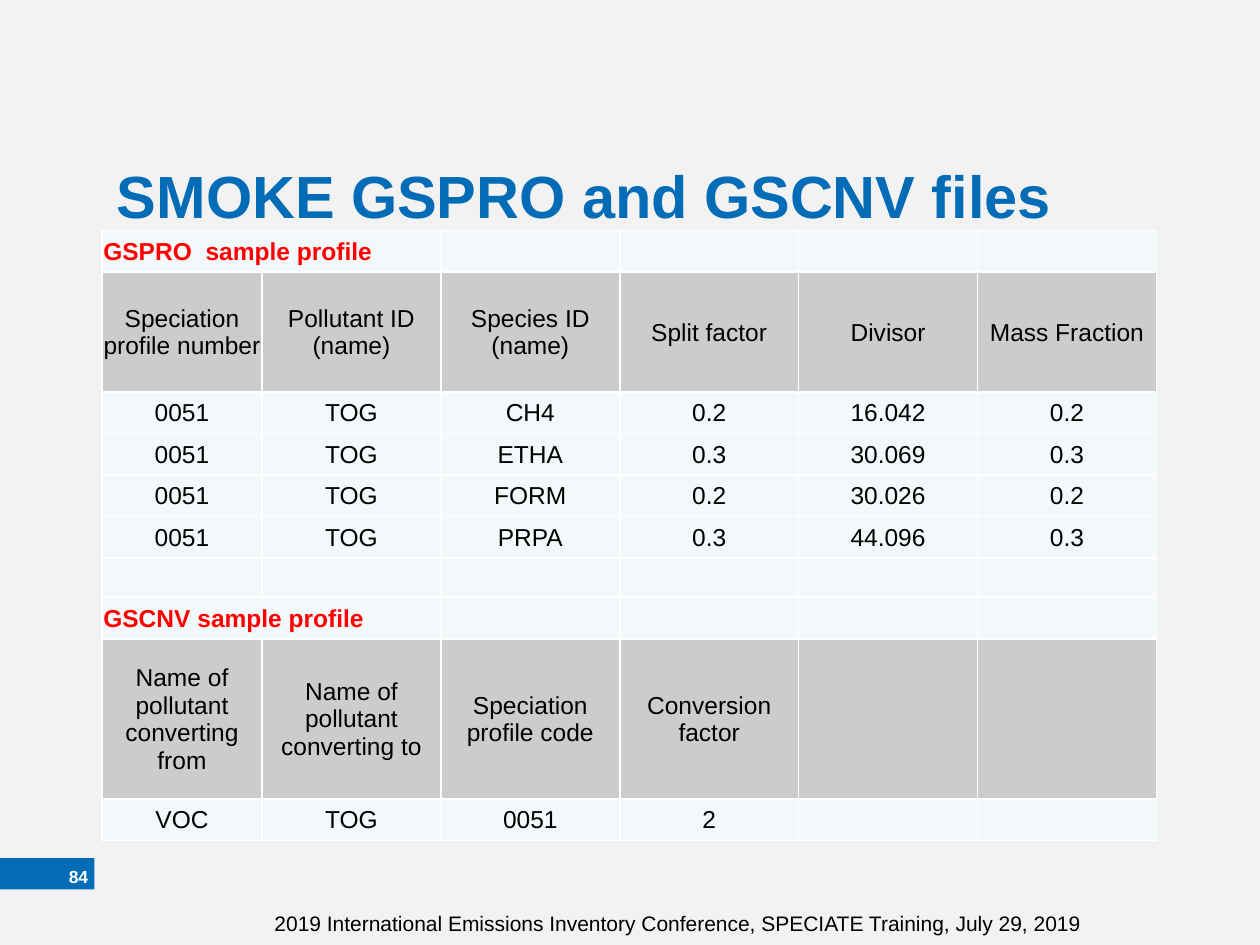
from lxml import etree
from pptx import Presentation
from pptx.dml.color import RGBColor
from pptx.enum import shapes, text
from pptx.oxml import ns
from pptx.util import Inches, Pt

BLUE = RGBColor(0x02, 0x6C, 0xB6)
RED = RGBColor(0xFF, 0, 0)
BLACK = RGBColor(0, 0, 0)
WHITE = RGBColor(0xFF, 0xFF, 0xFF)
PAGE = RGBColor(0xF2, 0xF2, 0xF2)
PALE = RGBColor(0xF3, 0xF9, 0xFA)
GREY = RGBColor(0xCC, 0xCC, 0xCC)

# Content: (kind of row, cell texts)
TITLE = "SMOKE GSPRO and GSCNV files"
FOOT = ("2019 International Emissions Inventory Conference, "
        "SPECIATE Training, July 29, 2019")
NUM = "84"
ROWS = [
    ("name", ["GSPRO  sample profile"]),
    ("head", ["Speciation profile number", "Pollutant ID (name)",
              "Species ID (name)", "Split factor", "Divisor",
              "Mass Fraction"]),
    ("data", ["0051", "TOG", "CH4", "0.2", "16.042", "0.2"]),
    ("data", ["0051", "TOG", "ETHA", "0.3", "30.069", "0.3"]),
    ("data", ["0051", "TOG", "FORM", "0.2", "30.026", "0.2"]),
    ("data", ["0051", "TOG", "PRPA", "0.3", "44.096", "0.3"]),
    ("gap", []),
    ("name", ["GSCNV sample profile"]),
    ("head", ["Name of pollutant converting from",
              "Name of pollutant converting to",
              "Speciation profile code", "Conversion factor"]),
    ("data", ["VOC", "TOG", "0051", "2"]),
]
COLS = [1.27] + [1.42] * 5
TALL = [0.33, 0.95] + [0.33] * 4 + [0.31, 0.33, 1.27, 0.33]


def write(frame, words, size=14, color=BLACK, bold=False,
          align=text.PP_ALIGN.LEFT):
    para = frame.paragraphs[0]
    para.alignment = align
    run = para.add_run()
    run.text = words
    font = run.font
    font.name, font.size, font.bold = "Arial", Pt(size), bold
    font.color.rgb = color


def add_box(slide, left, top, width, height):
    box = slide.shapes.add_textbox(*map(Inches, (left, top, width, height)))
    box.text_frame.word_wrap = True
    return box.text_frame


def add_edges(cell):
    props = cell._tc.get_or_add_tcPr()
    for side in ("lnL", "lnR", "lnT", "lnB"):
        line = etree.SubElement(props, ns.qn("a:" + side), w=str(Pt(1)))
        fill = etree.SubElement(line, ns.qn("a:solidFill"))
        etree.SubElement(fill, ns.qn("a:srgbClr"), val=str(WHITE))


def add_grid(slide):
    frame = slide.shapes.add_table(
        len(ROWS), len(COLS), Inches(0.81), Inches(1.83),
        Inches(sum(COLS)), Inches(sum(TALL)))
    table = frame.table
    table.first_row = table.horz_banding = False
    for col, width in zip(table.columns, COLS):
        col.width = Inches(width)
    for r, (kind, words) in enumerate(ROWS):
        table.rows[r].height = Inches(TALL[r])
        for c in range(len(COLS)):
            cell = table.cell(r, c)
            cell.margin_left = cell.margin_right = Inches(0.01)
            cell.margin_top, cell.margin_bottom = Inches(0.01), 0
            cell.vertical_anchor = text.MSO_ANCHOR.MIDDLE
            add_edges(cell)
            cell.fill.solid()
            cell.fill.fore_color.rgb = GREY if kind == "head" else PALE
            if c < len(words):
                look = (dict(color=RED, bold=True) if kind == "name"
                        else dict(align=text.PP_ALIGN.CENTER))
                write(cell.text_frame, words[c], **look)
        if kind == "name":
            table.cell(r, 0).merge(table.cell(r, 1))


def main():
    deck = Presentation()
    deck.slide_width, deck.slide_height = Inches(10), Inches(7.5)
    slide = deck.slides.add_slide(deck.slide_layouts[6])
    slide.background.fill.solid()
    slide.background.fill.fore_color.rgb = PAGE

    # Page number tab
    tab = slide.shapes.add_shape(
        shapes.MSO_SHAPE.RECTANGLE, 0, Inches(6.81), Inches(0.75),
        Inches(0.25))
    tab.shadow.inherit = False
    tab.fill.solid()
    tab.fill.fore_color.rgb = BLUE
    tab.line.fill.background()

    # Title, footer and page number
    head = add_box(slide, 0.83, 1.17, 8.33, 1.08)
    head.margin_top = Inches(0.09)
    write(head, TITLE, size=34, color=BLUE, bold=True)
    write(add_box(slide, 2.08, 7.18, 6.75, 0.5), FOOT, size=12)
    num = add_box(slide, 0.03, 6.83, 0.67, 0.25)
    num.margin_left = num.margin_right = 0
    num.margin_top = num.margin_bottom = 0
    num.vertical_anchor = text.MSO_ANCHOR.MIDDLE
    write(num, NUM, size=10, color=WHITE, bold=True,
          align=text.PP_ALIGN.RIGHT)

    # Sample profiles
    add_grid(slide)
    deck.save("out.pptx")


if __name__ == "__main__":
    main()
